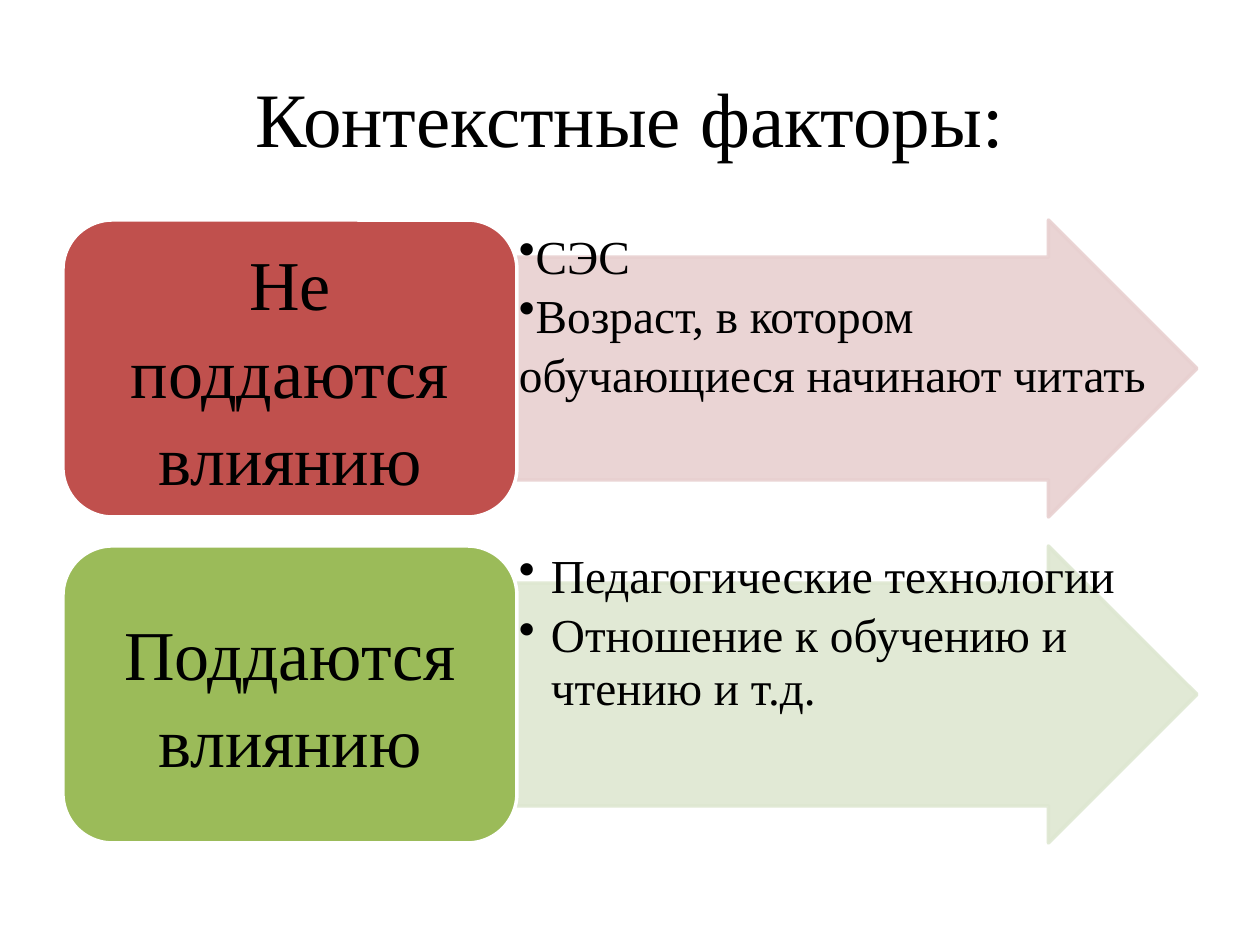
from dataclasses import dataclass

from lxml.etree import SubElement
from pptx import Presentation
from pptx.dml.color import RGBColor
from pptx.enum.shapes import MSO_SHAPE as Preset
from pptx.enum.text import MSO_ANCHOR as Anchor, PP_ALIGN as Align
from pptx.oxml.ns import qn
from pptx.util import Emu, Pt

PX = 914400 // 126


@dataclass(frozen=True)
class Theme:
    font: str = "Times New Roman"
    ink: str = "000000"
    edge: str = "FFFFFF"
    title_size: int = 44
    label_size: int = 40
    list_size: int = 27
    line_width: int = 2
    arrow_alpha: int = 90


class SlideBuilder:
    def __init__(self, slide, theme):
        self.slide = slide
        self.theme = theme

    def box(self, *lengths):
        return [Emu(length * PX) for length in lengths]

    def add_run(self, paragraph, text, size):
        run = paragraph.add_run()
        run.text = text
        run.font.name = self.theme.font
        run.font.size = Pt(size)
        run.font.color.rgb = RGBColor.from_string(self.theme.ink)

    def set_frame(self, frame, anchor, side, top):
        frame.word_wrap = True
        frame.vertical_anchor = anchor
        frame.margin_left = frame.margin_right = Emu(side * PX)
        frame.margin_top = frame.margin_bottom = Emu(top * PX)

    def title(self, text, *place):
        heading = self.slide.shapes.title
        heading.left, heading.top, heading.width, heading.height = self.box(*place)
        heading.text_frame.vertical_anchor = Anchor.MIDDLE
        paragraph = heading.text_frame.paragraphs[0]
        paragraph.alignment = Align.CENTER
        self.add_run(paragraph, text, self.theme.title_size)

    def shape(self, preset, place, fill, edge):
        shape = self.slide.shapes.add_shape(preset, *self.box(*place))
        shape.shadow.inherit = False
        shape.fill.solid()
        shape.fill.fore_color.rgb = RGBColor.from_string(fill)
        shape.line.color.rgb = RGBColor.from_string(edge)
        shape.line.width = Pt(self.theme.line_width)
        return shape

    def arrow(self, place, color):
        arrow = self.shape(Preset.RIGHT_ARROW, place, color, color)
        arrow.adjustments[0], arrow.adjustments[1] = 0.75, 0.5
        # Slight transparency on both fill and outline
        for paint in arrow.element.spPr.iter(qn("a:srgbClr")):
            SubElement(paint, qn("a:alpha"), val=str(self.theme.arrow_alpha * 1000))

    def label(self, text, place, color):
        label = self.shape(Preset.ROUNDED_RECTANGLE, place, color, self.theme.edge)
        self.set_frame(label.text_frame, Anchor.MIDDLE, side=10, top=0)
        paragraph = label.text_frame.paragraphs[0]
        paragraph.alignment = Align.CENTER
        paragraph.line_spacing = 1.04
        self.add_run(paragraph, text, self.theme.label_size)

    def bullets(self, items, place, indent, spacing, after):
        frame = self.slide.shapes.add_textbox(*self.box(*place)).text_frame
        self.set_frame(frame, Anchor.TOP, side=2, top=5)
        for index, item in enumerate(items):
            paragraph = frame.add_paragraph() if index else frame.paragraphs[0]
            paragraph.level = 1
            paragraph.alignment = Align.LEFT
            paragraph.line_spacing = spacing
            paragraph.space_after = Pt(after)
            props = paragraph._p.get_or_add_pPr()
            props.set("marL", str(indent * PX))
            props.set("indent", str(-indent * PX))
            SubElement(props, qn("a:buChar"), char="•")
            self.add_run(paragraph, item, self.theme.list_size)


# Each factor: label, label colour, arrow colour, items, indent, spacing, space after
FACTORS = [
    ("Не поддаются влиянию", "C0504D", "E8D0D0",
     ["СЭС", "Возраст, в котором обучающиеся начинают читать"], 0, 1.04, 0),
    ("Поддаются влиянию", "9BBB59", "DEE7D1",
     ["Педагогические технологии", "Отношение к обучению и чтению и т.д."], 32, 0.93, 4),
]
LEFT, TOP, LABEL_WIDTH, ARROW_WIDTH = 63, 220, 454, 680
ROW_HEIGHT, ROW_GAP = 297, 29


def main():
    deck = Presentation()
    deck.slide_width, deck.slide_height = Emu(1260 * PX), Emu(945 * PX)
    slide = deck.slides.add_slide(deck.slide_layouts[5])
    builder = SlideBuilder(slide, Theme())

    # Heading
    builder.title("Контекстные факторы:", LEFT, 38, LABEL_WIDTH + ARROW_WIDTH, 158)

    # One row per group of factors
    for row, (name, color, tint, items, indent, spacing, after) in enumerate(FACTORS):
        top = TOP + row * (ROW_HEIGHT + ROW_GAP)
        arrow_place = (LEFT + LABEL_WIDTH, top, ARROW_WIDTH, ROW_HEIGHT)
        builder.arrow(arrow_place, tint)
        builder.bullets(items, arrow_place, indent, spacing, after)
        builder.label(name, (LEFT, top, LABEL_WIDTH, ROW_HEIGHT), color)

    deck.save("out.pptx")


if __name__ == "__main__":
    main()
